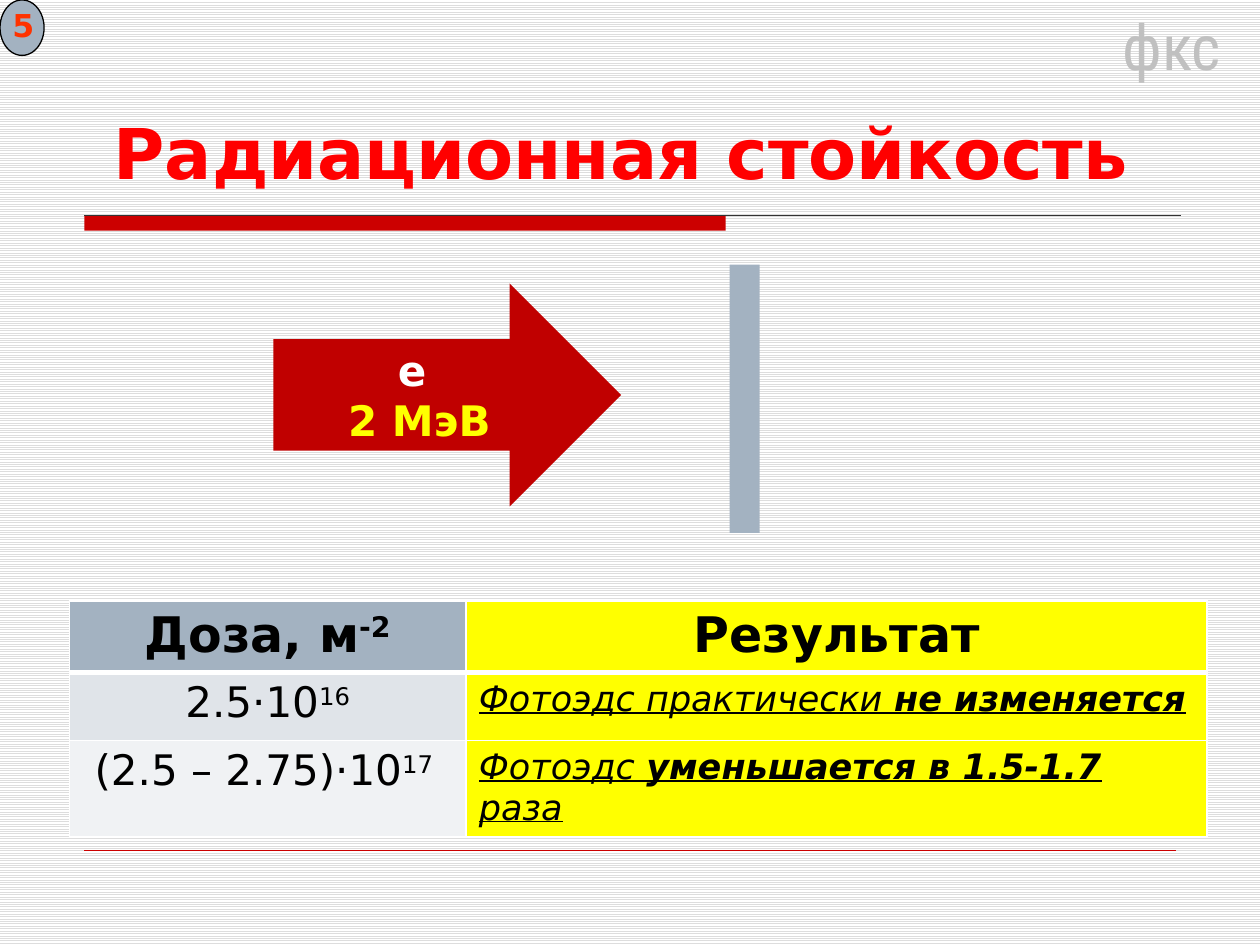
from dataclasses import dataclass

from lxml.etree import SubElement
from pptx import Presentation
from pptx.dml.color import RGBColor
from pptx.enum.dml import MSO_PATTERN
from pptx.enum.shapes import MSO_CONNECTOR, MSO_SHAPE
from pptx.enum.text import MSO_ANCHOR, PP_ALIGN
from pptx.oxml.ns import qn
from pptx.util import Inches, Pt


@dataclass(frozen=True)
class Theme:
    font: str = "DejaVu Sans"
    label_font: str = "Roboto Condensed"
    black: str = "000000"
    white: str = "FFFFFF"
    stripe: str = "DDDDDD"
    silver: str = "C0C0C0"
    slate: str = "A3B2C1"
    row_tints: tuple = ("E0E4E9", "F0F2F4")
    yellow: str = "FFFF00"
    title_red: str = "FF0000"
    number_red: str = "FF3300"
    bar_red: str = "CC0000"
    arrow_red: str = "C00000"
    rule: str = "333333"
    title_size: int = 40
    label_size: int = 36
    header_size: int = 28
    body_size: int = 24
    result_size: int = 20
    number_size: int = 18


THEME = Theme()


def color(value):
    return RGBColor.from_string(value)


def box(left, top, width, height):
    return Inches(left), Inches(top), Inches(width), Inches(height)


def format_run(run, size, fill, bold=False, font=THEME.font):
    run.font.name = font
    run.font.size = Pt(size)
    run.font.bold = bold
    run.font.color.rgb = color(fill)


def set_background(slide):
    fill = slide.background.fill
    fill.patterned()
    fill.pattern = MSO_PATTERN.LIGHT_HORIZONTAL
    fill.fore_color.rgb = color(THEME.stripe)
    fill.back_color.rgb = color(THEME.white)


def add_block(slide, preset, bounds, fill, outline=None):
    shape = slide.shapes.add_shape(preset, *box(*bounds))
    shape.shadow.inherit = False
    shape.fill.solid()
    shape.fill.fore_color.rgb = color(fill)
    if outline:
        shape.line.color.rgb = color(outline)
        shape.line.width = Pt(0.75)
    else:
        shape.line.fill.background()
    return shape


def add_rule(slide, left, right, y, stroke, width):
    rule = slide.shapes.add_connector(
        MSO_CONNECTOR.STRAIGHT, Inches(left), Inches(y), Inches(right), Inches(y))
    rule.line.color.rgb = color(stroke)
    rule.line.width = Pt(width)
    SubElement(rule._element.spPr, qn("a:effectLst"))


def add_label(slide, bounds, text, alignment, **style):
    text_frame = slide.shapes.add_textbox(*box(*bounds)).text_frame
    text_frame.word_wrap = False
    text_frame.text = text
    paragraph = text_frame.paragraphs[0]
    paragraph.alignment = alignment
    format_run(paragraph.runs[0], **style)


def set_title(slide, text):
    title = slide.shapes.title
    title.left, title.top, title.width, title.height = box(0.55, 0.26, 8.75, 1.33)
    title.text_frame.text = text
    title.text_frame.vertical_anchor = MSO_ANCHOR.BOTTOM
    paragraph = title.text_frame.paragraphs[0]
    paragraph.alignment = PP_ALIGN.CENTER
    format_run(paragraph.runs[0], THEME.title_size, THEME.title_red, bold=True)


def add_beam_arrow(slide):
    arrow = add_block(slide, MSO_SHAPE.RIGHT_ARROW, (2.17, 2.25, 2.76, 1.77), THEME.arrow_red)
    arrow.text_frame.text = "e \n2 МэВ"
    for paragraph, fill in zip(arrow.text_frame.paragraphs, (THEME.white, THEME.yellow)):
        paragraph.alignment = PP_ALIGN.CENTER
        format_run(paragraph.runs[0], THEME.body_size, fill, bold=True)


def set_borders(cell, top, bottom):
    properties = cell._tc.get_or_add_tcPr()
    for side, width in (("lnL", 1), ("lnR", 1), ("lnT", top), ("lnB", bottom)):
        line = SubElement(properties, qn(f"a:{side}"), w=str(Pt(width)))
        fill = SubElement(line, qn("a:solidFill"))
        SubElement(fill, qn("a:srgbClr"), val=THEME.white)


def fill_cell(cell, fill, top, bottom):
    set_borders(cell, top, bottom)
    cell.fill.solid()
    cell.fill.fore_color.rgb = color(fill)


def write_power(cell, base, exponent, size, bold=False):
    paragraph = cell.text_frame.paragraphs[0]
    paragraph.alignment = PP_ALIGN.CENTER
    for text in filter(None, (base, exponent)):
        run = paragraph.add_run()
        run.text = text
        format_run(run, size, THEME.black, bold)
    if exponent:
        run._r.get_or_add_rPr().set("baseline", "30000")


def write_result(cell, parts):
    paragraph = cell.text_frame.paragraphs[0]
    for index, text in enumerate(parts):
        run = paragraph.add_run()
        run.text = text
        format_run(run, THEME.result_size, THEME.black, bold=index == 1)
        run.font.italic = True
        run.font.underline = True


def add_dose_table(slide):
    doses = [
        ("2.5·10", "16", ("Фотоэдс практически ", "не изменяется")),
        ("(2.5 – 2.75)·10", "17 ", ("Фотоэдс ", "уменьшается в 1.5-1.7 ", "раза")),
    ]
    table = slide.shapes.add_table(3, 2, *box(0.55, 4.77, 9.03, 1.6)).table
    for column, width in zip(table.columns, (3.15, 5.88)):
        column.width = Inches(width)
    for row, height in zip(table.rows, (0.41, 0.54, 0.41)):
        row.height = Inches(height)

    for row, tint in enumerate((THEME.slate, *THEME.row_tints)):
        for column, fill in enumerate((tint, THEME.yellow)):
            fill_cell(table.cell(row, column), fill,
                      top=3 if row == 1 else 1, bottom=3 if row == 0 else 1)

    write_power(table.cell(0, 0), "Доза, м", "-2", THEME.header_size, bold=True)
    write_power(table.cell(0, 1), "Результат", None, THEME.header_size, bold=True)
    for row, (base, exponent, result) in enumerate(doses, start=1):
        write_power(table.cell(row, 0), base, exponent, THEME.body_size)
        write_result(table.cell(row, 1), result)


def main():
    presentation = Presentation()
    presentation.slide_width = Inches(10)
    presentation.slide_height = Inches(7.5)
    slide = presentation.slides.add_slide(presentation.slide_layouts[5])
    set_background(slide)

    add_block(slide, MSO_SHAPE.RECTANGLE, (0.67, 1.71, 5.09, 0.12), THEME.bar_red)
    add_rule(slide, 0.67, 9.37, 1.71, THEME.rule, 0.75)
    add_rule(slide, 0.67, 9.33, 6.75, THEME.bar_red, 0.25)

    add_block(slide, MSO_SHAPE.OVAL, (0, 0, 0.35, 0.44), THEME.slate, THEME.black)
    add_label(slide, (0, 0, 0.38, 0.4), "5", PP_ALIGN.LEFT,
              size=THEME.number_size, fill=THEME.number_red, bold=True)
    add_label(slide, (8.61, 0.01, 1.38, 0.88), "фкс", PP_ALIGN.CENTER,
              size=THEME.label_size, fill=THEME.silver, font=THEME.label_font)
    set_title(slide, "Радиационная стойкость")

    add_block(slide, MSO_SHAPE.RECTANGLE, (5.79, 2.1, 0.24, 2.13), THEME.slate)
    add_beam_arrow(slide)
    add_dose_table(slide)
    presentation.save("out.pptx")


if __name__ == "__main__":
    main()
